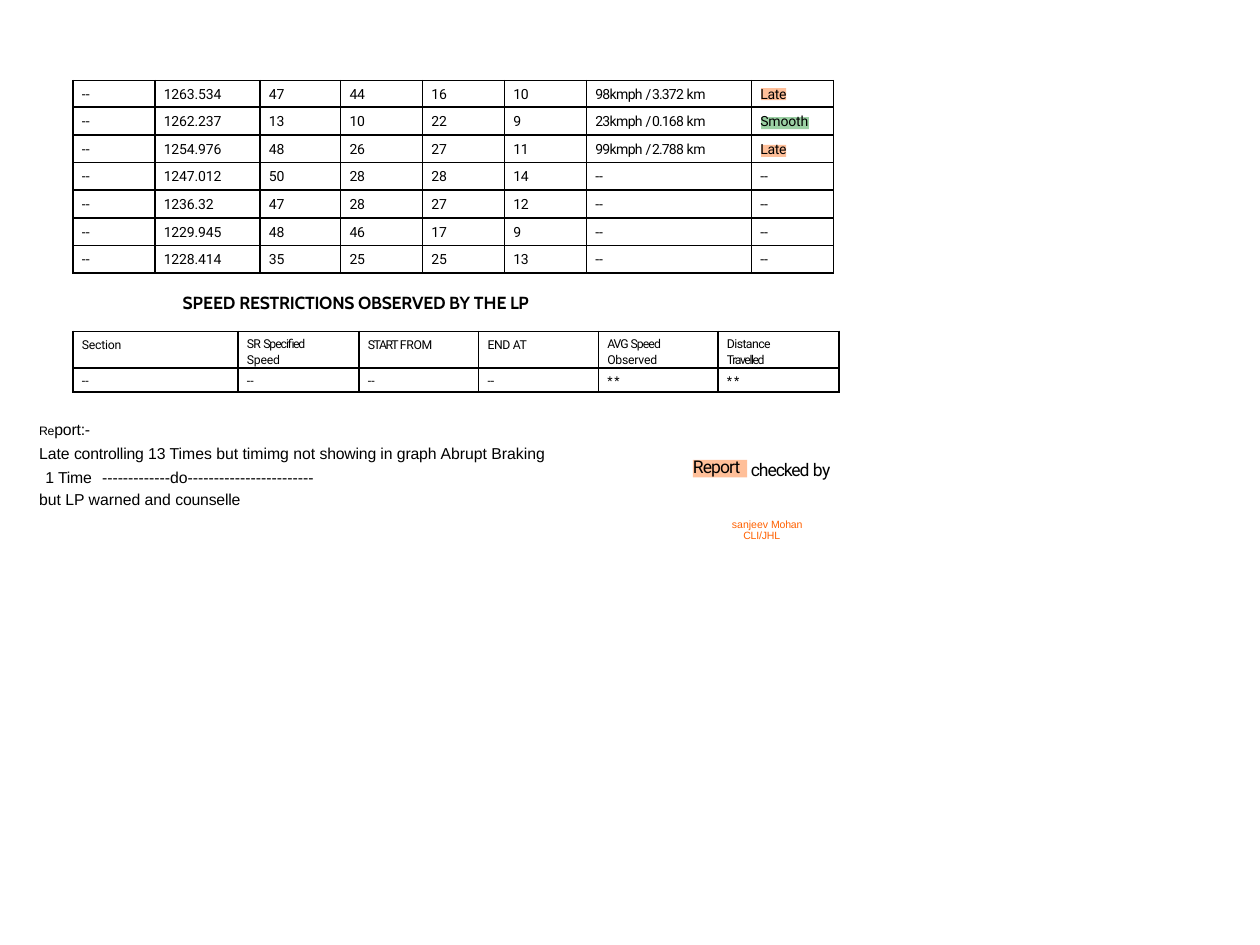
from dataclasses import dataclass

from lxml import etree
from pptx import Presentation, util as u
from pptx.dml import color
from pptx.enum import shapes, text
from pptx.oxml import ns


@dataclass(frozen=True)
class Theme:
    ink: str = "000000"
    late: str = "FF6100"
    smooth: str = "058A1B"
    line: float = 1
    note: float = 6
    small: float = 7
    body: float = 8
    report: float = 9
    head: float = 10
    sans: str = "Roboto"
    title: str = "Cabin"
    plain: str = "Arial"


class Page:
    """Places items on a grid of 100 columns by 75 rows."""

    def __init__(self, deck, theme):
        self.theme = theme
        self.slide = deck.slides.add_slide(deck.slide_layouts[6])
        self.unit = deck.slide_width / 100

    def size(self, *spans):
        return [u.Emu(round(s * self.unit)) for s in spans]

    def para(self, para, runs, size, font, tint=None, left=0.1, first=0,
             lead=None, gap=0, tab=None):
        """Fill a paragraph with (words, letter spacing) pairs."""
        for words, space in runs:
            run = para.add_run()
            run.text = words
            run._r.get_or_add_rPr().set("spc", str(round(space * 100)))
        para.font.size, para.font.name = u.Pt(size), font
        para.font.color.rgb = color.RGBColor.from_string(tint or self.theme.ink)
        para.alignment = text.PP_ALIGN.LEFT
        para.space_before = u.Pt(gap)
        if lead:
            para.line_spacing = lead
        props = para._p.get_or_add_pPr()
        for name, span in zip(("marL", "indent"), self.size(left, first)):
            props.set(name, str(span))
        if tab:
            stops = etree.Element(ns.qn("a:tabLst"))
            etree.SubElement(stops, ns.qn("a:tab"),
                             pos=str(self.size(tab)[0]), algn="l")
            props.find(ns.qn("a:defRPr")).addprevious(stops)

    def frame(self, shape, top=0):
        frame = shape.text_frame
        frame.word_wrap = True
        frame.vertical_anchor = text.MSO_ANCHOR.TOP
        frame.margin_left = frame.margin_right = frame.margin_bottom = 0
        frame.margin_top = self.size(top)[0]
        return frame

    def box(self, area, paras, size, font, top=0.1, **style):
        """Add a text box; each paragraph is (runs, own style)."""
        frame = self.frame(self.slide.shapes.add_textbox(*self.size(*area)), top)
        for i, (runs, own) in enumerate(paras):
            para = frame.add_paragraph() if i else frame.paragraphs[0]
            self.para(para, runs, size, font, **{**style, **own})
        return frame

    def mark(self, area, tint):
        """Add a see-through highlight."""
        shape = self.slide.shapes.add_shape(
            shapes.MSO_SHAPE.RECTANGLE, *self.size(*area))
        shape.shadow.inherit = False
        shape.line.fill.background()
        shape.fill.solid()
        shape.fill.fore_color.rgb = color.RGBColor.from_string(tint)
        fill = shape._element.spPr.find(ns.qn("a:solidFill"))
        etree.SubElement(fill[0], ns.qn("a:alpha"), val="40000")
        return shape

    def edge(self, cell):
        props = cell._tc.get_or_add_tcPr()
        for i, side in enumerate(("lnL", "lnR", "lnT", "lnB")):
            line = etree.Element(ns.qn("a:" + side),
                                 w=str(u.Pt(self.theme.line)))
            fill = etree.SubElement(line, ns.qn("a:solidFill"))
            etree.SubElement(fill, ns.qn("a:srgbClr"), val=self.theme.ink)
            props.insert(i, line)

    def table(self, left, top, cols, rows, data, size, right=0, tight=()):
        """Add a ruled table; tight columns have a two-line heading."""
        area = self.size(left, top, sum(cols), sum(rows))
        grid = self.slide.shapes.add_table(len(rows), len(cols), *area).table
        grid.first_row = grid.horz_banding = False
        for col, span in zip(grid.columns, self.size(*cols)):
            col.width = span
        for row, span in zip(grid.rows, self.size(*rows)):
            row.height = span
        for r, line in enumerate(data):
            for c, runs in enumerate(line):
                cell = grid.cell(r, c)
                snug = r == 0 and c in tight
                cell.fill.background()
                cell.margin_left = cell.margin_bottom = 0
                cell.margin_top, cell.margin_right = self.size(
                    0.3 if snug else 0.5, right)
                self.para(cell.text_frame.paragraphs[0], runs, size,
                          self.theme.sans, left=0.7,
                          lead=1.12 if snug else None)
                self.edge(cell)


DASH = [("-", -0.7), ("-", -0.5)]
STARS = [("**", 1.1)]


def brake(place, counts, speed=None, span=None, grade=None):
    """One row of the braking table."""
    row = [DASH, [(place, -0.1)]]
    row += [[(n, -0.2 if len(n) > 1 else -0.5)] for n in counts.split()]
    if not speed:
        return row + [DASH, DASH]
    pace = [(speed + " ", -0.4), ("/ ", -1.5), (span + " ", -0.5), ("km", -0.2)]
    return row + [pace, [(grade, -0.1 if grade == "Smooth" else -0.2)]]


def main():
    deck = Presentation()
    deck.slide_width, deck.slide_height = u.Inches(10), u.Inches(7.5)
    look = Theme()
    page = Page(deck, look)

    # Grade highlights, behind the braking table
    for top, wide, tint in ((7, 2, look.late), (9.3, 3.8, look.smooth),
                            (11.5, 2, look.late)):
        page.mark((60.4, top, wide, 0.95), tint)

    # Braking table
    page.table(5.8, 6.4, [6.5, 8.35, 6.4, 6.5, 6.5, 6.5, 13.1, 6.5],
               [2.1] + [2.2] * 6, [
        brake("1263.534", "47 44 16 10", "98kmph", "3.372", "Late"),
        brake("1262.237", "13 10 22 9", "23kmph", "0.168", "Smooth"),
        brake("1254.976", "48 26 27 11", "99kmph", "2.788", "Late"),
        brake("1247.012", "50 28 28 14"),
        brake("1236.32", "47 28 27 12"),
        brake("1229.945", "48 46 17 9"),
        brake("1228.414", "35 25 25 13"),
    ], look.body)

    # Speed restrictions
    frame = page.box((14.4, 23.1, 40.7, 1.8), [
        ([("SPEED ", 0), ("RESTRICTIONS OBSERVED ", -0.1), ("BY THE", 0),
          (" LP", -0.2)], {})], look.head, look.title)
    frame.paragraphs[0].font.bold = True
    heads = [
        [("Section", -0.1)],
        [("SR ", -0.4), ("Specified ", -0.6), ("Speed", -0.1)],
        [("START ", -0.8), ("FROM", -0.2)],
        [("END AT", -0.2)],
        [("AVG ", -0.6), ("Speed ", -0.5), ("Observed", -0.1)],
        [("Distance ", -0.3), ("Travelled", -0.8)],
    ]
    page.table(5.8, 26.3, [13.1, 9.6, 9.5, 9.5, 9.5, 9.6], [2.9, 1.9],
               [heads, [DASH] * 4 + [STARS] * 2], look.small,
               right=3, tight=(1, 4, 5))

    # Checked-by line
    frame = page.frame(page.mark((55, 36.5, 4.3, 1.4), look.late))
    page.para(frame.paragraphs[0], [("Report", -0.5)], look.head, look.sans,
              left=0, lead=u.Pt(10.1))
    page.box((59.5, 36.3, 7.2, 1.8), [([("checked ", -0.6), ("by", -0.2)], {})],
             look.head, look.sans)

    # Report remarks
    frame = page.box((3, 33.8, 49.9, 7), [
        ([("Re", -0.1), ("port:-", -0.1)], {"lead": u.Pt(6.6)}),
        ([("Late ", 0), ("controlling ", -0.1), ("13 Times but timimg not ", 0),
          ("showing ", -0.1), ("in ", 0), ("graph ", -0.1),
          ("Abrupt Braking", 0)], {"gap": 8}),
        ([("1", 0), (" Time", -0.1), ("\t-------------do" + "-" * 23, 0),
          ("-", -0.4)], {"gap": 7.2, "first": 0.5, "tab": 9.8}),
        ([("but LP warned and ", 0), ("counselle", -0.1)], {"gap": 6.6}),
    ], look.report, look.plain, lead=u.Pt(6))
    frame.paragraphs[0].runs[0].font.size = u.Pt(look.small)

    # Signature
    page.box((58, 41, 6.7, 2), [([("sanjeev ", 0), ("Mohan CLI/JHL", -0.1)], {})],
             look.note, look.plain, top=0.3, tint=look.late,
             left=1, first=-0.9, lead=u.Pt(6))

    deck.save("out.pptx")


if __name__ == "__main__":
    main()
